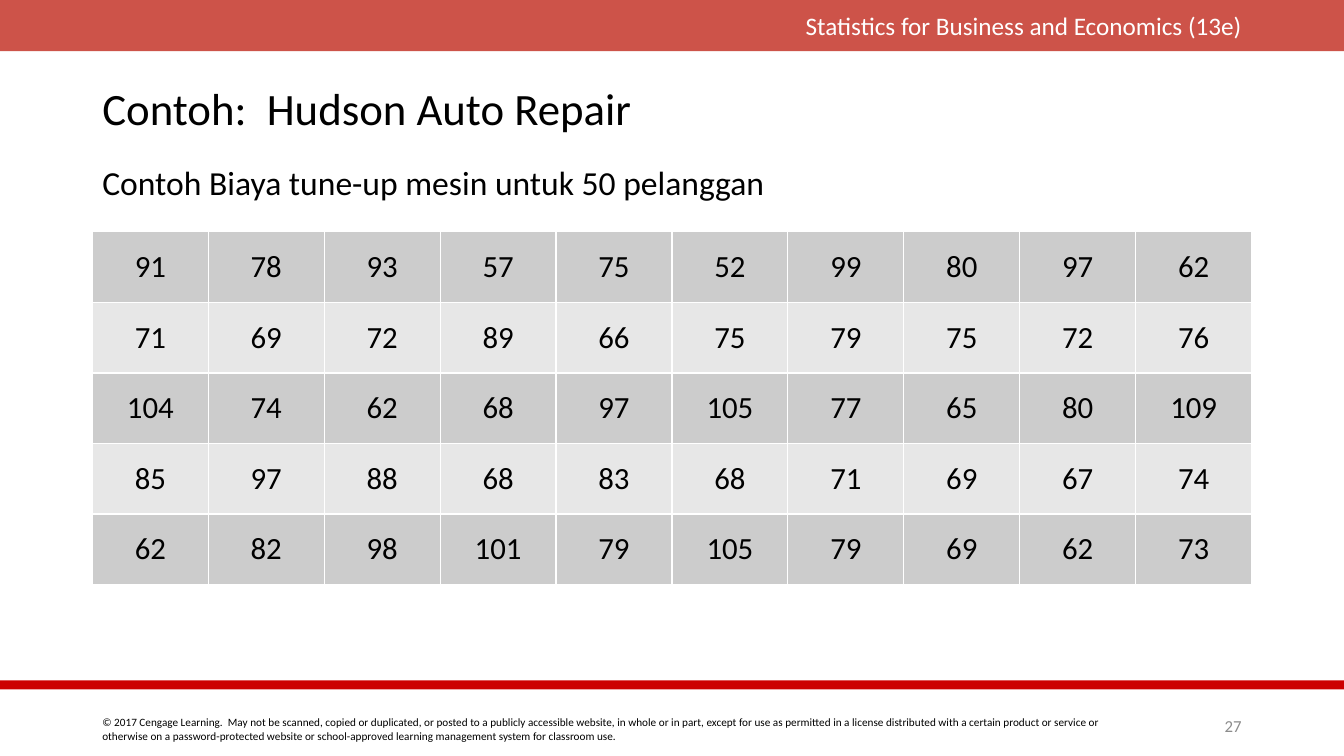
from dataclasses import dataclass

from lxml.etree import SubElement
from pptx import Presentation
from pptx.dml.color import RGBColor
from pptx.enum.shapes import MSO_SHAPE
from pptx.enum.text import MSO_ANCHOR, PP_ALIGN
from pptx.oxml.ns import qn
from pptx.util import Pt


@dataclass(frozen=True)
class Theme:
    face: str = "Calibri"
    ink: str = "000000"
    white: str = "FFFFFF"
    gray: str = "8C8C8C"
    band: str = "BF2317"
    rule: str = "CC0000"
    rows: tuple = ("CCCCCC", "E7E7E7")
    title: int = 32
    body: int = 24
    cell: int = 22
    head: int = 18
    page: int = 12
    note: int = 8


WIDE, HIGH = 960, 540
LEFT, SPAN = 66, 828
TOP, STEP = 165.6, 50.4

COSTS = [
    [91, 78, 93, 57, 75, 52, 99, 80, 97, 62],
    [71, 69, 72, 89, 66, 75, 79, 75, 72, 76],
    [104, 74, 62, 68, 97, 105, 77, 65, 80, 109],
    [85, 97, 88, 68, 83, 68, 71, 69, 67, 74],
    [62, 82, 98, 101, 79, 105, 79, 69, 62, 73],
]
NOTICE = (
    "© 2017 Cengage Learning.  May not be scanned, copied or duplicated, or posted to a "
    "publicly accessible website, in whole or in part, except for use as permitted in a "
    "license distributed with a certain product or service or otherwise on a "
    "password-protected website or school-approved learning management system for "
    "classroom use."
)


def apply(item, **values):
    for key, value in values.items():
        setattr(item, key, value)


class Painter:
    def __init__(self, slide, theme):
        self.slide, self.theme = slide, theme

    def letter(self, para, text, size, color, **form):
        """Set a paragraph's text, font and format values."""
        para.text = text
        apply(para, **form)
        apply(para.font, name=self.theme.face, size=Pt(size))
        para.font.color.rgb = RGBColor.from_string(color)

    def bar(self, top, high, color, alpha=None):
        """Draw a full-width bar; alpha is its opacity in percent."""
        shape = self.slide.shapes.add_shape(
            MSO_SHAPE.RECTANGLE, 0, Pt(top), Pt(WIDE), Pt(high))
        shape.shadow.inherit = False
        shape.line.fill.background()
        shape.fill.solid()
        shape.fill.fore_color.rgb = RGBColor.from_string(color)
        if alpha:
            tint = shape.element.spPr.find(".//" + qn("a:srgbClr"))
            SubElement(tint, qn("a:alpha"), val=str(alpha * 1000))

    def label(self, place, text, size, color, anchor=MSO_ANCHOR.TOP, **form):
        box = self.slide.shapes.add_textbox(*map(Pt, place))
        apply(box.text_frame, word_wrap=True, vertical_anchor=anchor)
        self.letter(box.text_frame.paragraphs[0], text, size, color, **form)

    def edge(self, cell):
        """Give all four sides of a cell a thin white border."""
        props = cell._tc.get_or_add_tcPr()
        for spot, side in enumerate(("lnL", "lnR", "lnT", "lnB")):
            line = SubElement(props, qn(f"a:{side}"), w=str(Pt(1)))
            fill = SubElement(line, qn("a:solidFill"))
            SubElement(fill, qn("a:srgbClr"), val=self.theme.white)
            props.insert(spot, line)

    def table(self, data):
        count = len(data[0])
        frame = self.slide.shapes.add_table(
            len(data), count, Pt(LEFT), Pt(TOP), Pt(SPAN), Pt(STEP * len(data)))
        grid = frame.table
        apply(grid, first_row=False, horz_banding=False)
        for col in grid.columns:
            col.width = Pt(SPAN / count)
        for r, row in enumerate(data):
            grid.rows[r].height = Pt(STEP)
            for c, cost in enumerate(row):
                cell = grid.cell(r, c)
                apply(cell, vertical_anchor=MSO_ANCHOR.MIDDLE,
                      margin_left=Pt(11.5), margin_right=Pt(11.5))
                cell.fill.solid()
                cell.fill.fore_color.rgb = RGBColor.from_string(self.theme.rows[r % 2])
                self.edge(cell)
                self.letter(cell.text_frame.paragraphs[0], str(cost), self.theme.cell,
                            self.theme.ink, alignment=PP_ALIGN.CENTER)


def main():
    deck = Presentation()
    apply(deck, slide_width=Pt(WIDE), slide_height=Pt(HIGH))
    theme = Theme()
    art = Painter(deck.slides.add_slide(deck.slide_layouts[6]), theme)

    art.bar(0, 36.5, theme.band, alpha=78)
    art.label((LEFT, 507.6, 744, 26.6), NOTICE, theme.note, theme.ink)
    art.label((551.5, 3.6, 342.5, 29), "Statistics for Business and Economics (13e)",
              theme.head, theme.white, alignment=PP_ALIGN.RIGHT)
    art.bar(486, 6.5, theme.rule)
    art.label((LEFT, 50.4, SPAN, 57.6), "Contoh:  Hudson Auto Repair", theme.title,
              theme.ink, MSO_ANCHOR.MIDDLE, line_spacing=0.9)
    art.label((844.5, 507.6, 49.5, 21.6), "27", theme.page, theme.gray,
              MSO_ANCHOR.MIDDLE, alignment=PP_ALIGN.RIGHT)
    art.label((LEFT, 115.2, SPAN, 360), "Contoh Biaya tune-up mesin untuk 50 pelanggan",
              theme.body, theme.ink, line_spacing=0.9)
    art.table(COSTS)
    deck.save("out.pptx")


if __name__ == "__main__":
    main()
